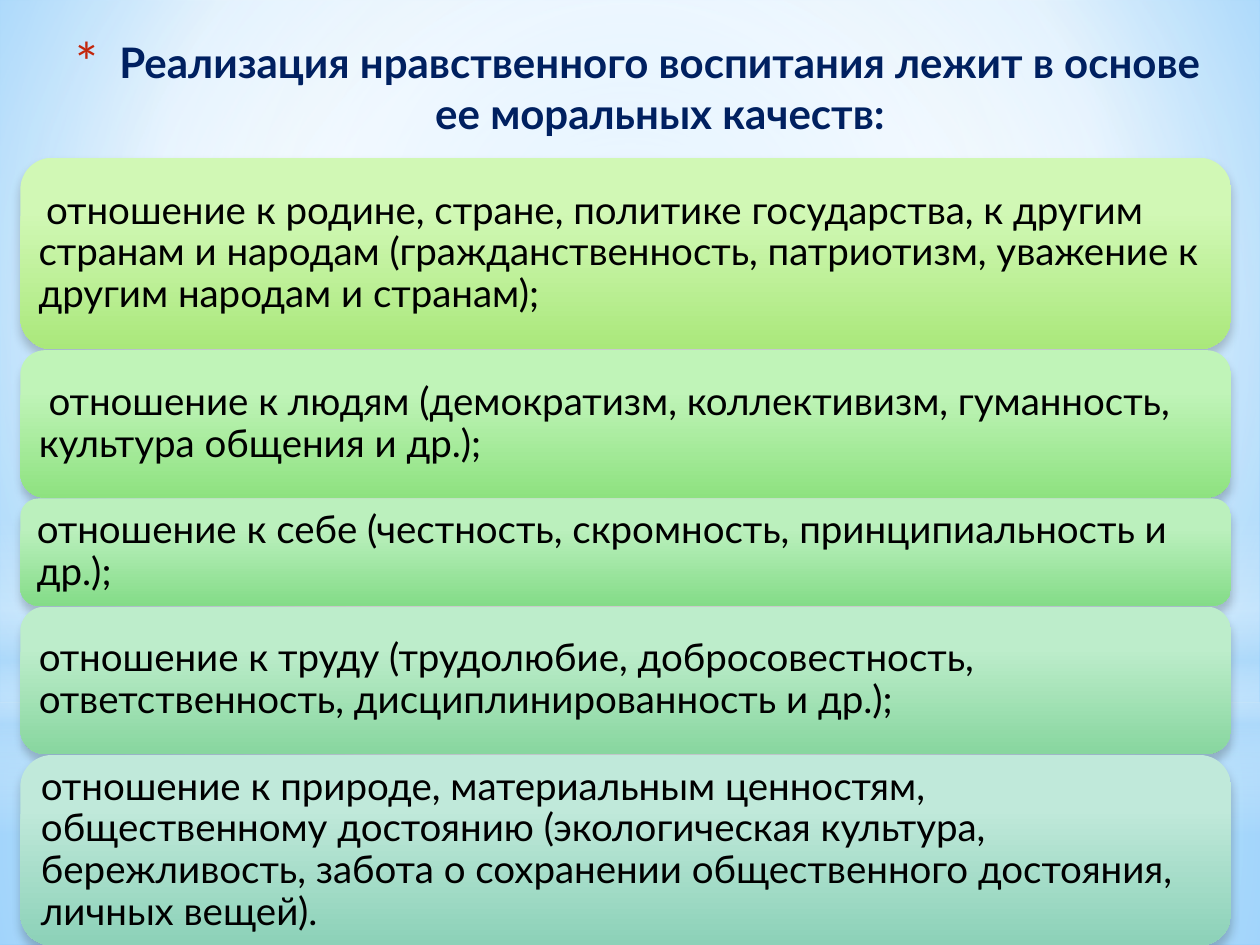
from lxml import etree
from pptx import Presentation
from pptx.dml.color import RGBColor
from pptx.enum import shapes, text
from pptx.oxml import parse_xml
from pptx.oxml.ns import nsdecls
from pptx.util import Cm, Pt

WHITE = RGBColor(0xFF, 0xFF, 0xFF)
BLACK = RGBColor(0, 0, 0)
NAVY = RGBColor(0x00, 0x20, 0x60)
RED = RGBColor(0xC3, 0x26, 0x0C)
PALE_BLUE = RGBColor(0xB4, 0xDC, 0xFA)
SKY = RGBColor(0x9E, 0xD5, 0xFF)
BLUE = RGBColor(0x5B, 0xB9, 0xFF)
LIME, LIME_DARK = RGBColor(0xD1, 0xF8, 0xB5), RGBColor(0xAA, 0xE8, 0x7B)
GREEN, GREEN_DARK = RGBColor(0xC0, 0xF4, 0xB8), RGBColor(0x8E, 0xE2, 0x80)
LEAF, LEAF_DARK = RGBColor(0xBB, 0xF0, 0xBD), RGBColor(0x84, 0xDC, 0x88)
MINT, MINT_DARK = RGBColor(0xBD, 0xED, 0xCB), RGBColor(0x88, 0xD6, 0x9F)
TEAL, TEAL_DARK = RGBColor(0xC0, 0xE9, 0xDA), RGBColor(0x8C, 0xD1, 0xB8)
FONT = "Lato"

# Content
TITLE = ("Реализация нравственного воспитания лежит в основе",
         "ее моральных качеств:")

# Height (cm), inset (cm), top and bottom colour, text runs with size
BARS = [
    (3.86, 0.18, LIME, LIME_DARK, [
        (" ", 17),
        ("отношение к родине, стране, политике государства, к другим странам "
         "и народам (гражданственность, патриотизм, уважение к другим народам "
         "и странам);", 22)]),
    (2.97, 0.23, GREEN, GREEN_DARK, [
        (" отношение к людям (демократизм, коллективизм, гуманность, "
         "культура общения и др.);", 22)]),
    (2.16, 0.23, LEAF, LEAF_DARK, [
        ("отношение к себе (честность, скромность, принципиальность и др.);", 22)]),
    (2.97, 0.23, MINT, MINT_DARK, [
        ("отношение к труду (трудолюбие, добросовестность, ответственность, "
         "дисциплинированность и др.);", 22)]),
    (3.84, 0.23, TEAL, TEAL_DARK, [
        ("отношение к природе, материальным ценностям, общественному достоянию "
         "(экологическая культура, бережливость, забота о сохранении "
         "общественного достояния, личных вещей).", 22)]),
]
BAR_LEFT, BAR_TOP, BAR_WIDTH, BAR_GAP = 0.41, 3.18, 24.41, 0.02

# Backdrop layers: shape, top, height (cm), stops (position, colour, opacity), centre
CENTRE = (50, 50, 50, 50)
RECT, OVAL = shapes.MSO_SHAPE.RECTANGLE, shapes.MSO_SHAPE.OVAL
LAYERS = [
    (RECT, 14.17, 4.88, [(0, WHITE, 91), (37, WHITE, 76), (100, PALE_BLUE, 79)], CENTRE),
    (RECT, 0, 14.17, [(0, WHITE, 89), (48, WHITE, 62), (100, PALE_BLUE, 79)], CENTRE),
    (RECT, 10.46, 6.35, [(0, WHITE, 0), (29, WHITE, 30), (45, PALE_BLUE, 40),
                         (55, WHITE, 26), (65, PALE_BLUE, 60), (100, WHITE, 0)], None),
    (OVAL, 4.45, 14.17, [(0, WHITE, 100), (56, WHITE, 0)], CENTRE),
]


def apply(target, values):
    for name, value in values.items():
        setattr(target, name, value)


def paint(owner, fill, stops, centre=None):
    """Give a gradient: round about a centre, or else from top to bottom."""
    fill.gradient()
    marks = "".join(
        f'<a:gs pos="{pos * 1000}"><a:srgbClr val="{colour}">'
        f'<a:alpha val="{opacity * 1000}"/></a:srgbClr></a:gs>'
        for pos, colour, opacity in stops)
    if centre:
        sides = " ".join(f'{side}="{value * 1000}"' for side, value in zip("ltrb", centre))
        way = f'<a:path path="circle"><a:fillToRect {sides}/></a:path>'
    else:
        way = '<a:lin ang="5400000" scaled="0"/>'
    old = owner.element.xpath(".//a:gradFill")[0]
    old.getparent().replace(old, parse_xml(
        f'<a:gradFill {nsdecls("a")} rotWithShape="1"><a:gsLst>{marks}</a:gsLst>{way}</a:gradFill>'))


def add_painted(page, kind, place, stops, centre=None):
    shape = page.shapes.add_shape(kind, *map(Cm, place))
    shape.shadow.inherit = False
    shape.line.fill.background()
    paint(shape, shape.fill, stops, centre)
    return shape


def add_title(page):
    box = page.shapes.title
    box.element.getparent().append(box.element)  # in front of the backdrop
    apply(box, dict(left=Cm(0.58), top=Cm(0.58), width=Cm(24.56), height=Cm(2.36)))
    frame = box.text_frame
    apply(frame, dict(word_wrap=True, auto_size=text.MSO_AUTO_SIZE.NONE,
                      vertical_anchor=text.MSO_ANCHOR.MIDDLE))
    para = frame.paragraphs[0]
    para.text = "\v".join(TITLE)
    para.alignment = text.PP_ALIGN.CENTER
    props = para._p.get_or_add_pPr()
    props.set("marL", str(Cm(0.89)))
    props.set("indent", str(-Cm(0.89)))
    for bullet in (f'<a:buClr {nsdecls("a")}><a:srgbClr val="{RED}"/></a:buClr>',
                   f'<a:buSzPct {nsdecls("a")} val="128000"/>',
                   f'<a:buFont {nsdecls("a")} typeface="{FONT}"/>',
                   f'<a:buChar {nsdecls("a")} char="*"/>'):
        props.append(parse_xml(bullet))
    for span in para.runs:
        apply(span.font, dict(name=FONT, size=Pt(24), bold=True))
        span.font.color.rgb = NAVY


def add_bar(page, top, height, inset, light, dark, runs):
    box = add_painted(page, shapes.MSO_SHAPE.ROUNDED_RECTANGLE,
                      (BAR_LEFT, top, BAR_WIDTH, height), [(28, light, 100), (100, dark, 100)])
    # Soft shadow below
    effects = box.element.xpath(".//a:effectLst")[0]
    effects.append(parse_xml(
        f'<a:outerShdw {nsdecls("a")} blurRad="{Pt(5)}" dist="{Pt(4)}" dir="5400000" '
        f'rotWithShape="0"><a:srgbClr val="{BLACK}"><a:alpha val="20000"/></a:srgbClr>'
        '</a:outerShdw>'))
    frame = box.text_frame
    apply(frame, dict(word_wrap=True, vertical_anchor=text.MSO_ANCHOR.MIDDLE))
    apply(frame, {f"margin_{side}": Cm(inset) for side in ("left", "top", "right", "bottom")})
    para = frame.paragraphs[0]
    apply(para, dict(alignment=text.PP_ALIGN.LEFT, line_spacing=0.9))
    for words, size in runs:
        span = para.add_run()
        span.text = words
        apply(span.font, dict(name=FONT, size=Pt(size)))
        span.font.color.rgb = BLACK


def main():
    deck = Presentation()
    apply(deck, dict(slide_width=Cm(25.4), slide_height=Cm(19.05)))
    page = deck.slides.add_slide(deck.slide_layouts[5])

    # Backdrop
    paint(page, page.background.fill,
          [(0, SKY, 100), (60, WHITE, 100), (100, BLUE, 100)], (20, 10, 20, 60))
    for kind, top, height, stops, centre in LAYERS:
        add_painted(page, kind, (0, top, 25.4, height), stops, centre)

    # Title and stacked bars
    add_title(page)
    top = BAR_TOP
    for height, *look in BARS:
        add_bar(page, top, height, *look)
        top += height + BAR_GAP

    deck.save("out.pptx")


if __name__ == "__main__":
    main()
